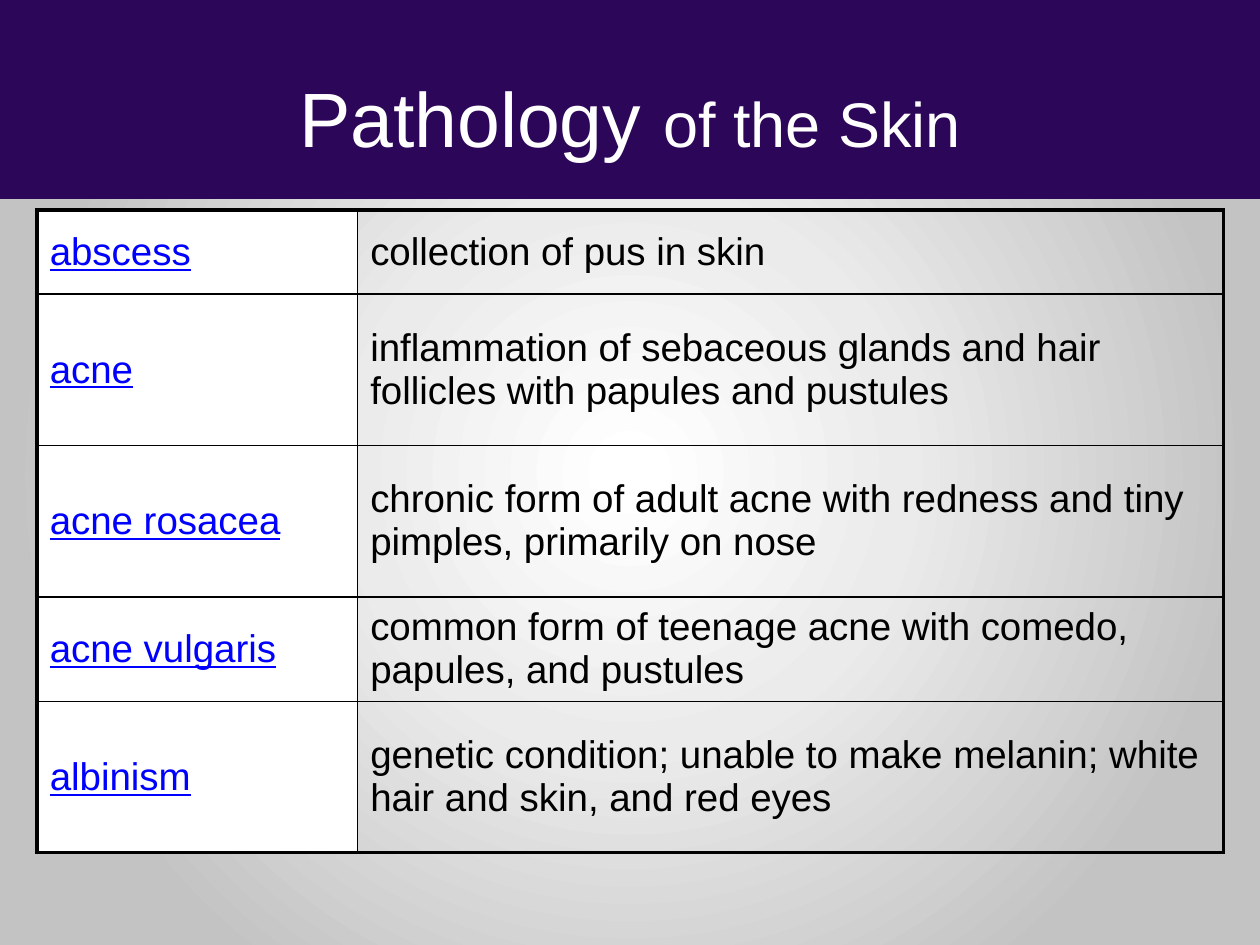
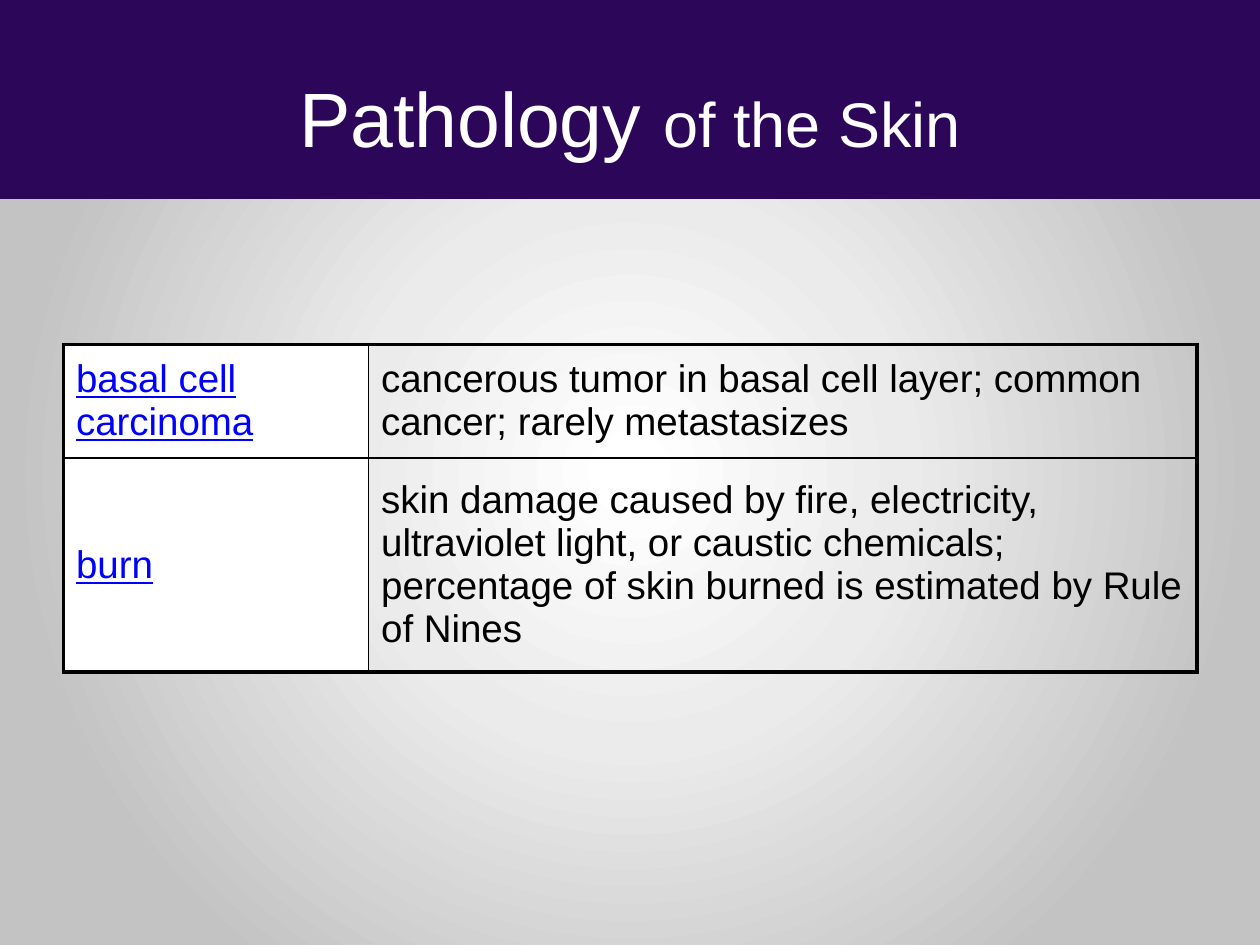
from pptx import Presentation
from pptx.dml.color import RGBColor
from pptx.enum.shapes import MSO_SHAPE
from pptx.enum.text import MSO_ANCHOR, PP_ALIGN
from pptx.oxml import parse_xml
from pptx.oxml.ns import nsdecls
from pptx.util import Cm, Pt

PURPLE = RGBColor(0x2C, 0x06, 0x59)
WHITE = RGBColor(0xFF, 0xFF, 0xFF)
BLACK = RGBColor(0x00, 0x00, 0x00)
LINK_BLUE = RGBColor(0x00, 0x00, 0xFF)
LIGHT_GREY = RGBColor(0xEB, 0xEB, 0xEB)
MID_GREY = RGBColor(0xC3, 0xC3, 0xC3)

FONT = "Arial"
OUTER_LINE, INNER_LINE = Pt(2.25), Pt(1)
NO_TABLE_STYLE = "{2D5ABB26-0587-4C30-8999-92F81FD0307C}"
TITLE_PARTS = [("Pathology ", 44), ("of the Skin", 36)]

# Each page: left, top, column widths (cm), then rows of height, term, meaning
PAGES = [
    (0.75, 4.23, (6.46, 17.45), [
        (1.7, "abscess", "collection of pus in skin"),
        (3.05, "acne", "inflammation of sebaceous glands and hair "
                       "follicles with papules and pustules"),
        (3.05, "acne rosacea", "chronic form of adult acne with redness and "
                               "tiny pimples, primarily on nose"),
        (2.11, "acne vulgaris", "common form of teenage acne with comedo, "
                                "papules, and pustules"),
        (3.05, "albinism", "genetic condition; unable to make melanin; "
                           "white hair and skin, and red eyes"),
    ]),
    (1.28, 6.94, (6.15, 16.7), [
        (2.29, "basal cell carcinoma", "cancerous tumor in basal cell layer; "
                                       "common cancer; rarely metastasizes"),
        (4.32, "burn", "skin damage caused by fire, electricity, ultraviolet "
                       "light, or caustic chemicals; percentage of skin "
                       "burned is estimated by Rule of Nines"),
    ]),
]


def add_text(para, text, size, color):
    span = para.add_run()
    span.text = text
    span.font.name = FONT
    span.font.size = Pt(size)
    span.font.color.rgb = color
    return span


def set_borders(cell, widths):
    """Draw the left, right, top and bottom lines, in that order."""
    properties = cell._tc.get_or_add_tcPr()
    for position, (side, width) in enumerate(zip("LRTB", widths)):
        properties.insert(position, parse_xml(
            f'<a:ln{side} {nsdecls("a")} w="{width}"><a:solidFill>'
            f'<a:srgbClr val="{BLACK}"/></a:solidFill></a:ln{side}>'))


deck = Presentation()
deck.slide_width, deck.slide_height = Cm(25.4), Cm(19.05)
layout = deck.slide_layouts[5]

# Shared background: a grey glow from the centre
stops = "".join(
    f'<a:gs pos="{percent * 1000}"><a:srgbClr val="{color}"/></a:gs>'
    for percent, color in [(2, WHITE), (35, LIGHT_GREY), (79, MID_GREY)])
layout.element.cSld.insert(0, parse_xml(
    f'<p:bg {nsdecls("p", "a")}><p:bgPr><a:gradFill><a:gsLst>{stops}</a:gsLst>'
    '<a:path path="circle">'
    '<a:fillToRect l="50000" t="50000" r="50000" b="50000"/></a:path>'
    '</a:gradFill><a:effectLst/></p:bgPr></p:bg>'))

for left, top, widths, entries in PAGES:
    page = deck.slides.add_slide(layout)

    # Title band, placed behind the title
    band = page.shapes.add_shape(MSO_SHAPE.RECTANGLE, 0, 0,
                                 deck.slide_width, Cm(4.01))
    band.shadow.inherit = False
    band.fill.solid()
    band.fill.fore_color.rgb = PURPLE
    band.line.fill.background()
    page.shapes.element.insert(2, band.element)

    # Title
    title = page.shapes.title
    title.left, title.top = Cm(1.27), Cm(0.76)
    title.width, title.height = Cm(22.86), Cm(3.18)
    title.text_frame.vertical_anchor = MSO_ANCHOR.MIDDLE
    para = title.text_frame.paragraphs[0]
    para.alignment = PP_ALIGN.CENTER
    for text, size in TITLE_PARTS:
        add_text(para, text, size, WHITE)

    # Table of terms and meanings
    heights = [height for height, term, meaning in entries]
    frame = page.shapes.add_table(len(entries), 2, Cm(left), Cm(top),
                                  Cm(sum(widths)), Cm(sum(heights)))
    table = frame.table
    table.first_row = table.horz_banding = False
    table._tbl.tblPr.find("{*}tableStyleId").text = NO_TABLE_STYLE
    for column, width in zip(table.columns, widths):
        column.width = Cm(width)

    last_row = len(entries) - 1
    for row_number, (height, *texts) in enumerate(entries):
        table.rows[row_number].height = Cm(height)
        for column_number, text in enumerate(texts):
            is_term = column_number == 0
            cell = table.cell(row_number, column_number)
            cell.vertical_anchor = MSO_ANCHOR.MIDDLE
            para = cell.text_frame.paragraphs[0]
            para.space_before = Pt(4.4)
            span = add_text(para, text, 22, LINK_BLUE if is_term else BLACK)
            if is_term:
                span.font.underline = True
                cell.fill.solid()
                cell.fill.fore_color.rgb = WHITE
            else:
                cell.fill.background()
            on_edge = (is_term, not is_term,
                       row_number == 0, row_number == last_row)
            set_borders(cell, [OUTER_LINE if edge else INNER_LINE
                               for edge in on_edge])

deck.save("out.pptx")
